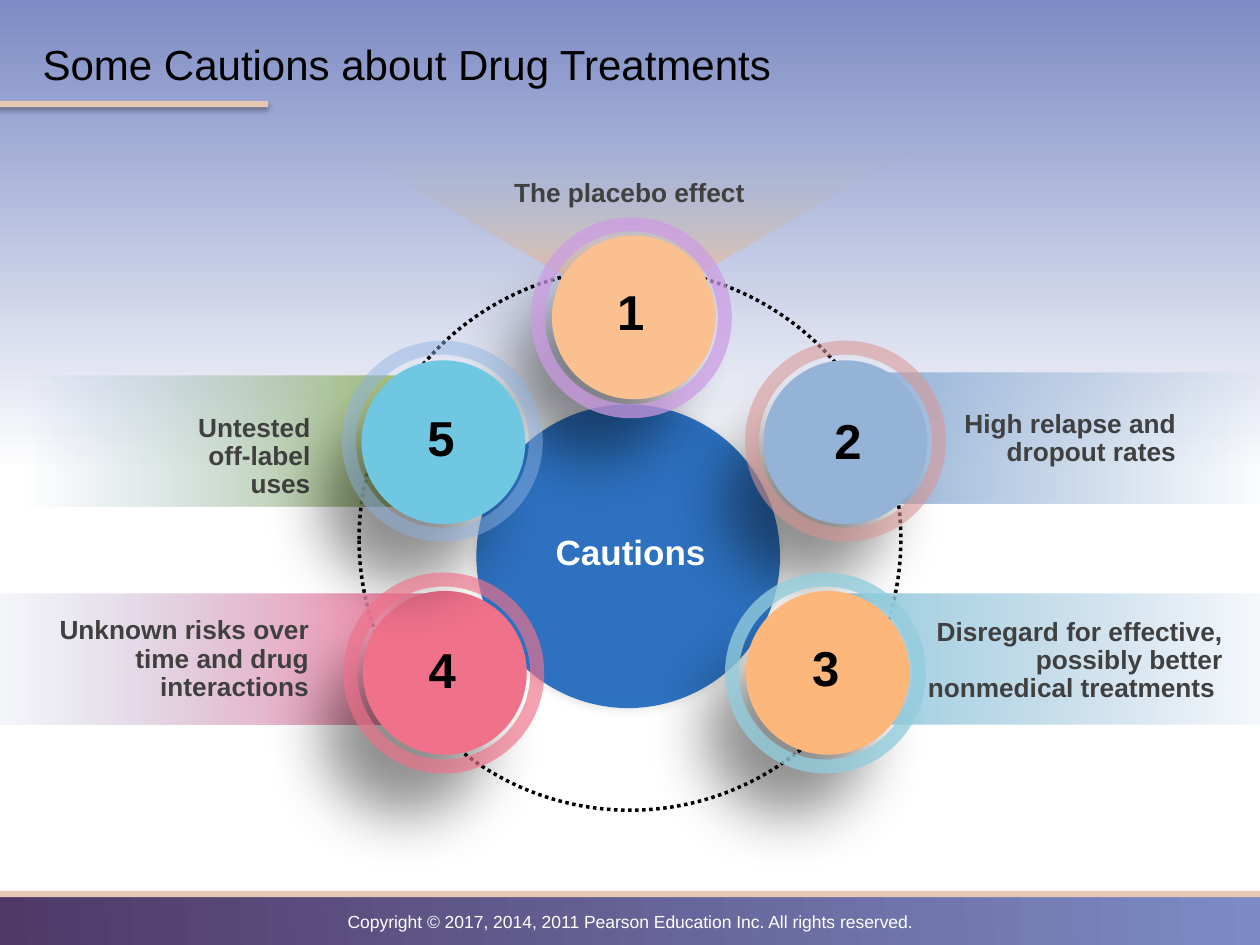
from dataclasses import dataclass
from pptx import Presentation
from pptx.dml.color import RGBColor as RGB
from pptx.enum.dml import MSO_LINE as Dash
from pptx.enum.shapes import MSO_SHAPE as Kind
from pptx.enum.text import MSO_ANCHOR as Anchor, MSO_AUTO_SIZE as Fit, PP_ALIGN as Align
from pptx.oxml.ns import qn
from pptx.oxml.xmlchemy import OxmlElement as Node
from pptx.util import Pt


@dataclass(frozen=True)
class Theme:
    """Colours, type sizes and shadows of the slide."""
    font: str = "Arial"
    black: str = "000000"
    white: str = "FFFFFF"
    gray: str = "404040"
    sand: str = "E7C8B3"
    blue: str = "7C8BC4"
    plum: str = "4F3967"
    hub: str = "0056B8"
    peach: str = "FAC090"
    haze: str = "95B3D7"
    title: int = 24
    digit: int = 28
    core: int = 20
    label: int = 15
    foot: int = 10
    thin: tuple = (35, 3.1, 1.8, 90)
    soft: tuple = (15, 6, 1, 135)
    deep: tuple = (43, 35.5, 41, 124)


T = Theme()

BANDS = [
    ((488.2, 213.1, 241.2, 74.9), (46.8, 18, 144, 40.3), T.haze, False,
     "High relapse and dropout rates"),
    ((465.1, 339.1, 282.2, 74.9), (46.8, 10.8, 193.7, 56.9), "93CDDD", False,
     "Disregard for effective, possibly better nonmedical treatments "),
    ((-31, 339.1, 282.2, 74.9), (54.8, 10.1, 159.8, 56.9), "FF7D9E", True,
     "Unknown risks over time and drug interactions"),
    ((12.2, 214.6, 245.5, 74.9), (65.6, 18.7, 106.6, 40.3), "9BBB59", True,
     "Untested off-label uses"),
]

DISCS = [
    ((315.4, 134.6), (-1.8, 26.7), T.peach),
    ((436.3, 205.9), (1.5, 28.8), T.haze),
    ((426.2, 337.7), (-1.1, 26.6), "FDB77B"),
    ((207.4, 337.7), (-1.5, 28.1), "EF718A"),
    ((206.6, 205.9), (-1.4, 27.4), "6FC7E2"),
]

RINGS = [
    ((307.4, 128.2), "CD9CE4", 72),
    ((429.8, 198.7), "D99694", 57),
    ((418.3, 331.2), "93CDDD", 79),
    ((200.2, 331.2), "EF718A", 66),
    ((199.4, 198.7), "8EB4E3", 47),
]


def add_node(root, tag, **attrs):
    """Append a child element with the given attributes."""
    node = Node(tag)
    for key, value in attrs.items():
        node.set(key, str(value))
    root.append(node)
    return node


def add_tint(root, color, alpha=100):
    """Append a colour with its opacity in percent."""
    tint = add_node(root, "a:srgbClr", val=color)
    if alpha < 100:
        add_node(tint, "a:alpha", val=alpha * 1000)


def fade(fill, root, stops, angle):
    """Fill with a linear gradient, the angle running clockwise."""
    fill.gradient()
    grad = next(root.iter(qn("a:gradFill")))
    for child in list(grad):
        grad.remove(child)
    grad.set("rotWithShape", "1")
    row = add_node(grad, "a:gsLst")
    for pos, *tint in stops:
        add_tint(add_node(row, "a:gs", pos=pos * 1000), *tint)
    add_node(grad, "a:lin", ang=angle * 60000, scaled=0)


def add_form(shapes, kind, box, fill=None, alpha=100, shade=None, flip=None):
    """Add a plain shape without outline."""
    form = shapes.add_shape(kind, *map(Pt, box))
    form.shadow.inherit = False
    form.line.fill.background()
    props = form.element.spPr
    if fill:
        form.fill.solid()
        form.fill.fore_color.rgb = RGB.from_string(fill)
        if alpha < 100:
            add_node(next(props.iter(qn("a:srgbClr"))), "a:alpha", val=alpha * 1000)
    else:
        form.fill.background()
    if shade:
        dark, blur, dist, angle = shade
        cast = add_node(props.find(qn("a:effectLst")), "a:outerShdw", blurRad=Pt(blur),
                        dist=Pt(dist), dir=angle * 60000, algn="ctr", rotWithShape=0)
        add_tint(cast, T.black, dark)
    if flip:
        props.find(qn("a:xfrm")).set(flip, "1")
    return form


def add_text(shapes, box, text, size, color, align=Align.CENTER, bold=True,
             anchor=Anchor.TOP, space=0.9, grow=False):
    """Add a wrapped text box with one paragraph."""
    frame = shapes.add_textbox(*map(Pt, box)).text_frame
    frame.word_wrap = True
    frame.vertical_anchor = anchor
    frame.auto_size = Fit.SHAPE_TO_FIT_TEXT if grow else Fit.NONE
    para = frame.paragraphs[0]
    para.text, para.alignment, para.line_spacing = text, align, space
    font = para.font
    font.name, font.size, font.bold = T.font, Pt(size), bold
    font.color.rgb = RGB.from_string(color)


def add_loop(shapes, box, color, width):
    """Add an unfilled circle and return its line."""
    line = add_form(shapes, Kind.OVAL, box).line
    line.color.rgb = RGB.from_string(color)
    line.width = Pt(width)
    return line


def add_foot(shapes, box):
    """Draw the footer bar with its strip and copyright line."""
    x, y, w, h = box
    bar = add_form(shapes, Kind.RECTANGLE, box)
    fade(bar.fill, bar.element, [(0, T.plum), (100, T.blue)], 356)
    add_form(shapes, Kind.RECTANGLE, (x, y - 0.7, w + 3.6, 3.6), T.sand)
    add_text(shapes, (x, y + 7.2, w, 19.4),
             "Copyright © 2017, 2014, 2011 Pearson Education Inc. All rights reserved.",
             T.foot, T.white, bold=False, space=1, grow=True)


def add_head(shapes, box):
    """Draw the title with the accent bar under it."""
    x, y, w, h = box
    add_form(shapes, Kind.RECTANGLE, (x - 31, y + h, 167, 3.6), T.sand, shade=T.thin)
    add_text(shapes, box, "Some Cautions about Drug Treatments", T.title, T.black,
             Align.LEFT, False, Anchor.MIDDLE, 1)


def add_hub(shapes, box):
    """Draw the dotted orbit and the hub inside it."""
    x, y, w, h = box
    add_loop(shapes, box, T.black, 2).dash_style = Dash.ROUND_DOT
    group = shapes.add_group_shape().shapes
    add_form(group, Kind.OVAL, (x + 67, y + 77.7, 173.5, 173.5), T.hub, 80, T.soft)
    add_text(group, (x + 65.5, y + 133.2, 179.3, 59.8), "Cautions", T.core, T.white,
             anchor=Anchor.MIDDLE)


def add_beam(shapes, box):
    """Draw the fading wedge with the top label."""
    x, y, w, h = box
    beam = add_form(shapes, Kind.ISOSCELES_TRIANGLE, box, flip="flipV")
    fade(beam.fill, beam.element, [(0, T.peach), (99, T.haze, 0)], 90)
    add_text(shapes, (x + 82, y + 27.4, 205.2, 38.9), "The placebo effect", T.label, T.gray)


def add_band(shapes, box, inner, color, left, text):
    """Draw a band fading outward with its label."""
    x, y, w, h = box
    dx, dy, wide, high = inner
    group = shapes.add_group_shape().shapes
    band = add_form(group, Kind.RECTANGLE, box, flip="flipH" if left else None)
    fade(band.fill, band.element, [(0, color), (99, T.haze, 0)], 0)
    add_text(group, (x + dx, y + dy, wide, high), text, T.label, T.gray, Align.RIGHT, grow=True)


def add_disc(shapes, box, shift, color, text):
    """Draw a numbered disc with a deep shadow."""
    x, y, w, h = box
    dx, dy = shift
    group = shapes.add_group_shape().shapes
    add_form(group, Kind.OVAL, box, color, shade=T.deep)
    add_text(group, (x + dx, y + dy, w, 38.2), text, T.digit, T.black, grow=True)


def add_ring(shapes, box, color, alpha):
    """Draw a translucent ring round a disc."""
    line = add_loop(shapes, box, color, 8)
    add_node(line.color._xFill.find(qn("a:srgbClr")), "a:alpha", val=alpha * 1000)


def main():
    """Build the slide and save it."""
    deck = Presentation()
    deck.slide_width, deck.slide_height = Pt(720), Pt(540)
    slide = deck.slides.add_slide(deck.slide_layouts[6])
    fade(slide.background.fill, slide.element,
         [(0, T.white), (50, T.white), (100, T.blue)], 270)
    shapes = slide.shapes
    add_foot(shapes, (0, 509.8, 720, 32.4))
    add_head(shapes, (17.3, 15.1, 612, 42.5))
    add_hub(shapes, (205.2, 153.4, 309.6, 309.6))
    add_beam(shapes, (175, 72, 370, 107.3))
    for band in BANDS:
        add_band(shapes, *band)
    for num, (spot, shift, color) in enumerate(DISCS, 1):
        add_disc(shapes, (*spot, 93.6, 93.6), shift, color, str(num))
    for spot, color, alpha in RINGS:
        add_ring(shapes, (*spot, 106.8, 106.8), color, alpha)
    deck.save("out.pptx")


if __name__ == "__main__":
    main()
